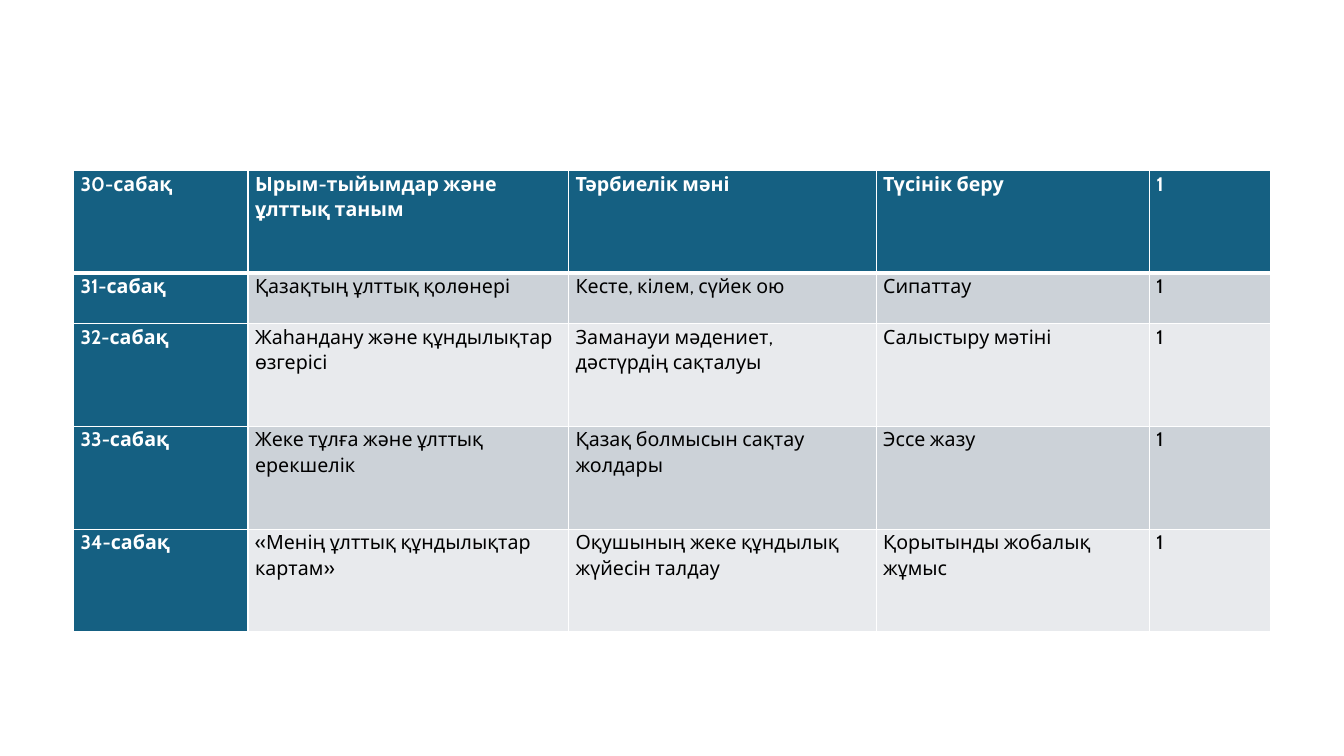
"""Build a slide with the lesson plan table for lessons 30 to 34."""
from dataclasses import dataclass

from lxml.etree import SubElement
from pptx import Presentation
from pptx.dml.color import RGBColor as Rgb
from pptx.oxml.ns import qn
from pptx.util import Inches, Pt

LESSONS = [
    ("30-сабақ", "Ырым-тыйымдар және ұлттық таным", "Тәрбиелік мәні", "Түсінік беру", "1"),
    ("31-сабақ", "Қазақтың ұлттық қолөнері", "Кесте, кілем, сүйек ою", "Сипаттау", "1"),
    ("32-сабақ", "Жаһандану және құндылықтар өзгерісі", "Заманауи мәдениет, дәстүрдің сақталуы",
     "Салыстыру мәтіні", "1"),
    ("33-сабақ", "Жеке тұлға және ұлттық ерекшелік", "Қазақ болмысын сақтау жолдары",
     "Эссе жазу", "1"),
    ("34-сабақ", "«Менің ұлттық құндылықтар картам»", "Оқушының жеке құндылық жүйесін талдау",
     "Қорытынды жобалық жұмыс", "1"),
]
COLUMN_WIDTHS = [1.73, 3.18, 3.05, 2.71, 1.2]
ROW_HEIGHTS = [1.02, 0.5, 1.02, 1.02, 1.02]
LEFT, TOP = 0.73, 1.69


@dataclass(frozen=True)
class Theme:
    """Colours, type and line sizes of the slide."""
    font: str = "Cabin"
    size: int = 14
    accent: str = "156082"
    bands: tuple = ("E8EAED", "CCD2D8")
    light: str = "FFFFFF"
    dark: str = "000000"
    rule: int = 1
    header_rule: int = 3


THEME = Theme()


def add_borders(cell, row):
    """Draw the four cell edges, with a thick one under the header row."""
    properties = cell._tc.get_or_add_tcPr()
    thick_edge = {0: "B", 1: "T"}.get(row)
    for edge in "LRTB":
        width = THEME.header_rule if edge == thick_edge else THEME.rule
        line = SubElement(properties, qn(f"a:ln{edge}"), w=str(Pt(width)))
        SubElement(SubElement(line, qn("a:solidFill")), qn("a:srgbClr"), val=THEME.light)


def fill_cell(cell, text, row, column):
    """Write and style one cell according to its place in the table."""
    heading = row == 0 or column == 0
    add_borders(cell, row)
    cell.fill.solid()
    cell.fill.fore_color.rgb = Rgb.from_string(THEME.accent if heading else THEME.bands[row % 2])
    cell.margin_left = cell.margin_right = Inches(0.07)
    cell.margin_top = cell.margin_bottom = 0
    cell.text = text
    paragraph = cell.text_frame.paragraphs[0]
    paragraph.line_spacing = 1.07
    paragraph.space_after = Pt(8)
    font = paragraph.font
    font.name, font.size, font.bold = THEME.font, Pt(THEME.size), heading
    font.color.rgb = Rgb.from_string(THEME.light if heading else THEME.dark)


def main():
    """Lay out the table and save the slide."""
    deck = Presentation()
    deck.slide_width, deck.slide_height = Inches(13.33), Inches(7.5)
    slide = deck.slides.add_slide(deck.slide_layouts[6])
    plan = slide.shapes.add_table(
        len(LESSONS), len(COLUMN_WIDTHS), Inches(LEFT), Inches(TOP),
        Inches(sum(COLUMN_WIDTHS)), Inches(sum(ROW_HEIGHTS))).table
    for column, width in zip(plan.columns, COLUMN_WIDTHS):
        column.width = Inches(width)
    for row, height in zip(plan.rows, ROW_HEIGHTS):
        row.height = Inches(height)
    for row, lesson in enumerate(LESSONS):
        for column, text in enumerate(lesson):
            fill_cell(plan.cell(row, column), text, row, column)
    deck.save("out.pptx")


if __name__ == "__main__":
    main()
